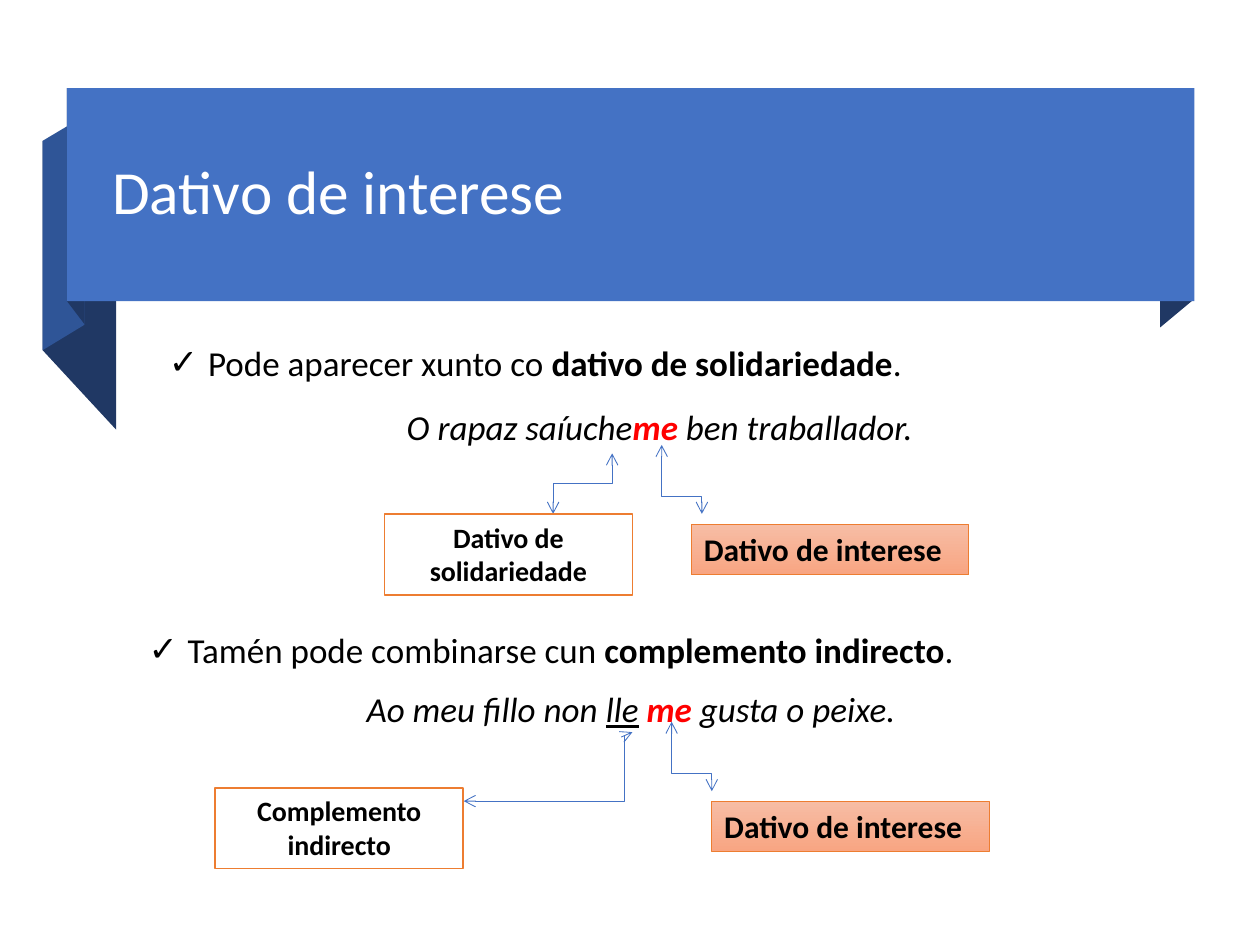
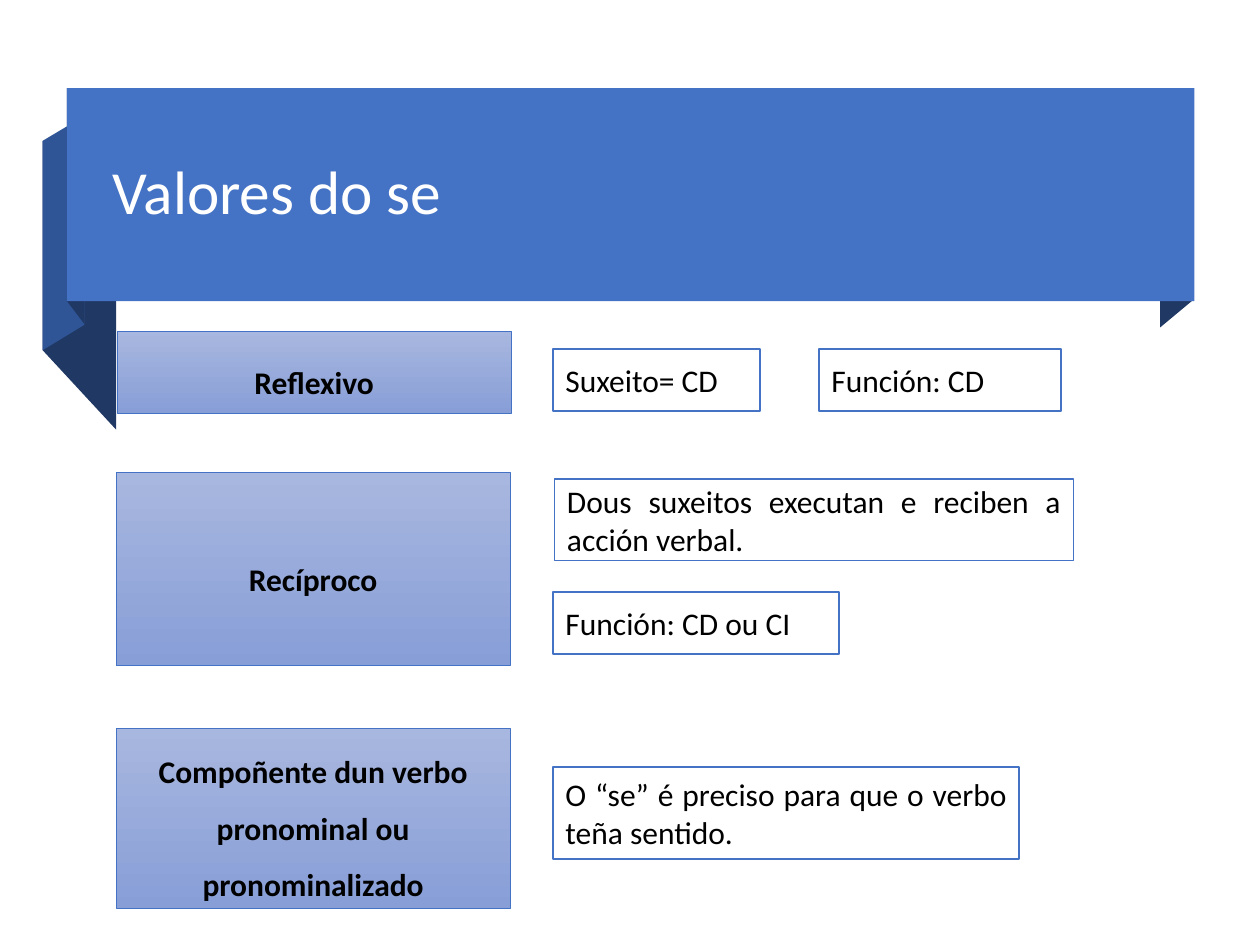
from typing import NamedTuple

from pptx import Presentation
from pptx.dml.color import RGBColor
from pptx.enum.shapes import MSO_CONNECTOR as Link, MSO_SHAPE as Form
from pptx.enum.text import MSO_ANCHOR as Anchor, MSO_AUTO_SIZE as Fit, PP_ALIGN as Align
from pptx.oxml.ns import qn
from pptx.util import Cm, Pt
from lxml.etree import SubElement

HUES = {
    "white": "FFFFFF", "black": "000000", "red": "FF0000",
    "blue": "4472C4", "fold": "2F5597", "navy": "203864", "orange": "ED7D31",
    "peach": "F7BDA5", "salmon": "F8A582", "mist": "A8B7DF", "haze": "889ED7",
}
FONT = "Calibri"


class Area(NamedTuple):
    """Left, top, width and height in centimetres."""
    x: float
    y: float
    w: float
    h: float

    def emu(self) -> list:
        return [Cm(side) for side in self]


class Run(NamedTuple):
    """Marks: b bold, i italic, u underlined."""
    text: str
    marks: str = ""
    hue: str = "black"


class Look(NamedTuple):
    fill: tuple
    line: str
    width: float
    size: float
    align: Align
    marks: str = ""
    anchor: Anchor = Anchor.MIDDLE
    space: float = 1.0


class Box(NamedTuple):
    text: str
    area: Area
    look: Look


class Arrow(NamedTuple):
    """A bent arrow; an upright one leaves its start vertically."""
    start: tuple
    end: tuple
    bend: float
    upright: bool = True


class Fold(NamedTuple):
    hue: str
    points: list


FOLDS = [
    Fold("navy", [(2.34, 8.66), (0.86, 7.06), (0.86, 2.84), (2.34, 4.45)]),
    Fold("fold", [(1.7, 6.55), (0.86, 7.06), (0.86, 2.84), (1.7, 2.34)]),
    Fold("navy", [(1.7, 6.53), (1.35, 6.07), (1.35, 1.78), (1.7, 2.26)]),
    Fold("navy", [(24.05, 6.05), (23.39, 6.6), (23.39, 2.31), (24.05, 1.78)]),
]
BAND = Area(1.35, 1.78, 22.73, 4.29)
TITLE = Area(2.01, 2.24, 21.39, 3.38)

DATIVE = Look(("peach", "salmon"), "orange", 0.5, 18, Align.LEFT, "b", Anchor.TOP)
PLAIN = Look(("white",), "orange", 1, 16, Align.CENTER, "b", Anchor.TOP)
VALUE = Look(("mist", "haze"), "blue", 0.5, 18, Align.CENTER, "b", space=1.5)
NOTE = Look(("white",), "blue", 1, 18, Align.JUSTIFY)

POINTS = [
    (Area(3.15, 6.76, 15.6, 1.12),
     [Run("Pode aparecer xunto co "), Run("dativo de solidariedade", "b"), Run(".")]),
    (Area(2.74, 12.55, 20.4, 1.12),
     [Run("Tamén pode combinarse cun "), Run("complemento indirecto", "b"), Run(".")]),
]
SAMPLES = [
    (Area(7.95, 8.05, 15.6, 1.12),
     [Run("O rapaz saíuche", "i"), Run("me", "bi", "red"), Run(" ben traballador.", "i")]),
    (Area(7.14, 13.74, 15.6, 1.12),
     [Run("Ao meu fillo non ", "i"), Run("lle", "iu"), Run(" ", "i"),
      Run("me ", "bi", "red"), Run("gusta o peixe.", "i")]),
]
ARROWS = [
    Arrow((13.34, 8.97), (14.15, 10.36), 0.75),
    Arrow((12.34, 9.14), (11.15, 10.36), 0.5),
    Arrow((13.54, 14.55), (14.35, 15.95), 0.75),
    Arrow((12.75, 14.76), (9.35, 16.15), 0.05, False),
]
LABELS = [
    Box("Dativo de interese", Area(13.94, 10.57, 5.59, 1.02), DATIVE),
    Box("Dativo de solidariedade", Area(7.75, 10.36, 5, 1.63), PLAIN),
    Box("Dativo de interese", Area(14.35, 16.15, 5.59, 1.02), DATIVE),
    Box("Complemento indirecto", Area(4.34, 15.88, 5, 1.63), PLAIN),
]
VALUES = [
    Box("Reflexivo", Area(2.36, 6.68, 7.95, 1.65), VALUE),
    Box("Suxeito= CD", Area(11.15, 7.04, 4.17, 1.24), NOTE),
    Box("Función: CD", Area(16.51, 7.04, 4.88, 1.24), NOTE),
    Box("Recíproco", Area(2.34, 9.53, 7.95, 3.89), VALUE),
    Box("Dous suxeitos executan e reciben a acción verbal.",
        Area(11.18, 9.65, 10.46, 1.65), NOTE),
    Box("Función: CD ou CI", Area(11.15, 11.94, 5.77, 1.24), NOTE),
    Box("Compoñente dun verbo pronominal ou pronominalizado",
        Area(2.34, 14.68, 7.95, 3.63), VALUE),
    Box("O “se” é preciso para que o verbo teña sentido.",
        Area(11.15, 15.47, 9.4, 1.85), NOTE),
]


def rgb(hue: str) -> RGBColor:
    return RGBColor.from_string(HUES[hue])


def place(shape, area: Area) -> None:
    shape.left, shape.top, shape.width, shape.height = area.emu()


def paint(shape, hue: str) -> None:
    """Flat fill, no outline, no shadow."""
    shape.shadow.inherit = False
    shape.fill.solid()
    shape.fill.fore_color.rgb = rgb(hue)
    shape.line.fill.background()


def write(shape, runs: list, size: float, align: Align = Align.LEFT,
          anchor: Anchor = Anchor.TOP, space: float = 1.0, tick: bool = False) -> None:
    """Fill a shape with one paragraph, ticked if asked."""
    frame = shape.text_frame
    frame.word_wrap = True
    frame.auto_size = Fit.NONE
    frame.vertical_anchor = anchor
    para = frame.paragraphs[0]
    if tick:
        props = para._p.get_or_add_pPr()
        props.set("marL", str(Cm(0.79)))
        props.set("indent", str(-Cm(0.79)))
        SubElement(props, qn("a:buChar"), char="✓")
    para.alignment = align
    para.line_spacing = space
    para.space_before = Pt(0)
    for item in runs:
        run = para.add_run()
        run.text = item.text
        font = run.font
        font.name, font.size = FONT, Pt(size)
        font.color.rgb = rgb(item.hue)
        font.bold = "b" in item.marks
        font.italic = "i" in item.marks
        font.underline = "u" in item.marks


def draw_box(slide, box: Box) -> None:
    look = box.look
    shape = slide.shapes.add_shape(Form.RECTANGLE, *box.area.emu())
    paint(shape, look.fill[0])
    if len(look.fill) > 1:
        shape.fill.gradient()
        shape.fill.gradient_angle = 270
        for stop, hue in zip(shape.fill.gradient_stops, look.fill):
            stop.color.rgb = rgb(hue)
    shape.line.color.rgb = rgb(look.line)
    shape.line.width = Pt(look.width)
    write(shape, [Run(box.text, look.marks)], look.size, look.align,
          look.anchor, look.space)


def draw_arrow(slide, arrow: Arrow) -> None:
    """An upright arrow is a level one turned a quarter about its centre."""
    (x1, y1), (x2, y2) = arrow.start, arrow.end
    turn = 0
    if arrow.upright:
        turn = 270 if x2 > x1 else 90
        mid_x, mid_y = (x1 + x2) / 2, (y1 + y2) / 2
        half_w, half_h = (y2 - y1) / 2, abs(x2 - x1) / 2
        if turn == 270:
            half_w = -half_w
        x1, x2 = mid_x - half_w, mid_x + half_w
        y1, y2 = mid_y - half_h, mid_y + half_h
    link = slide.shapes.add_connector(Link.ELBOW, Cm(x1), Cm(y1), Cm(x2), Cm(y2))
    link.line.color.rgb = rgb("blue")
    link.line.width = Pt(0.5)
    props = link.element.spPr
    if turn:
        props.find(qn("a:xfrm")).set("rot", str(turn * 60000))
    guides = props.find(qn("a:prstGeom")).find(qn("a:avLst"))
    SubElement(guides, qn("a:gd"), name="adj1", fmla=f"val {round(arrow.bend * 100000)}")
    line = props.find(qn("a:ln"))
    for end in ("a:headEnd", "a:tailEnd"):
        SubElement(line, qn(end), type="arrow")
    SubElement(props, qn("a:effectLst"))


def add_page(deck, layout: int, title: str):
    """New slide with the ribbon behind its placeholders."""
    slide = deck.slides.add_slide(deck.slide_layouts[layout])
    shapes = slide.shapes
    for fold in FOLDS:
        first, *rest = [(Cm(x), Cm(y)) for x, y in fold.points]
        pen = shapes.build_freeform(*first)
        pen.add_line_segments(rest, close=True)
        paint(pen.convert_to_shape(), fold.hue)
    paint(shapes.add_shape(Form.RECTANGLE, *BAND.emu()), "blue")
    for holder in list(slide.placeholders):
        shapes.element.append(holder.element)
    place(shapes.title, TITLE)
    write(shapes.title, [Run(title, hue="white")], 35, anchor=Anchor.MIDDLE, space=0.9)
    return slide


def add_dative(deck) -> None:
    slide = add_page(deck, 3, "Dativo de interese")
    holders = list(slide.placeholders)[1:]
    for holder, (area, runs) in zip(holders, POINTS):
        place(holder, area)
        write(holder, runs, 20, tick=True)
    for area, runs in SAMPLES:
        write(slide.shapes.add_textbox(*area.emu()), runs, 20)
    for arrow in ARROWS:
        draw_arrow(slide, arrow)
    for box in LABELS:
        draw_box(slide, box)


def add_values(deck) -> None:
    slide = add_page(deck, 5, "Valores do se")
    for box in VALUES:
        draw_box(slide, box)


def main() -> None:
    deck = Presentation()
    deck.slide_width, deck.slide_height = Cm(25.4), Cm(19.05)
    add_dative(deck)
    add_values(deck)
    deck.save("out.pptx")


if __name__ == "__main__":
    main()
